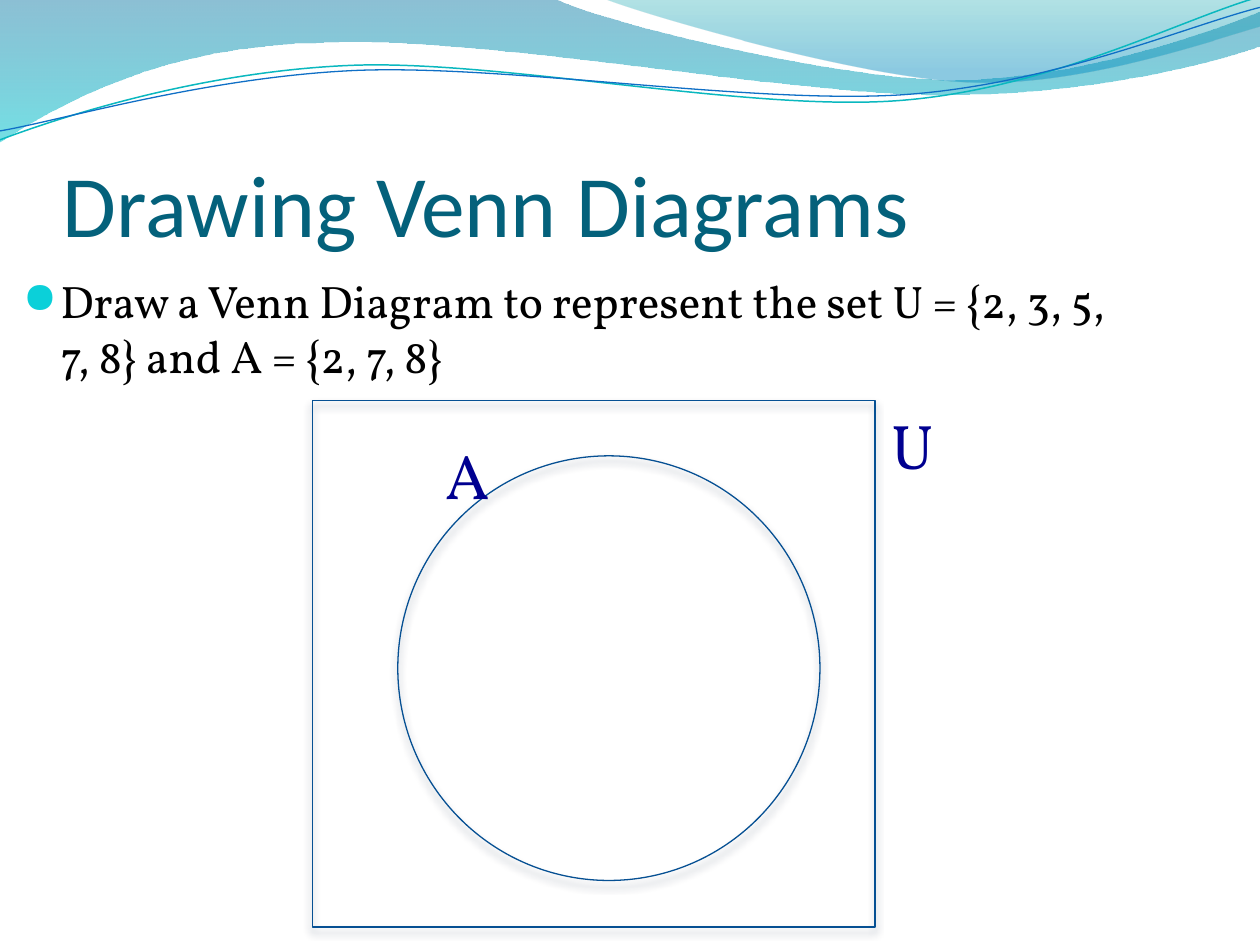
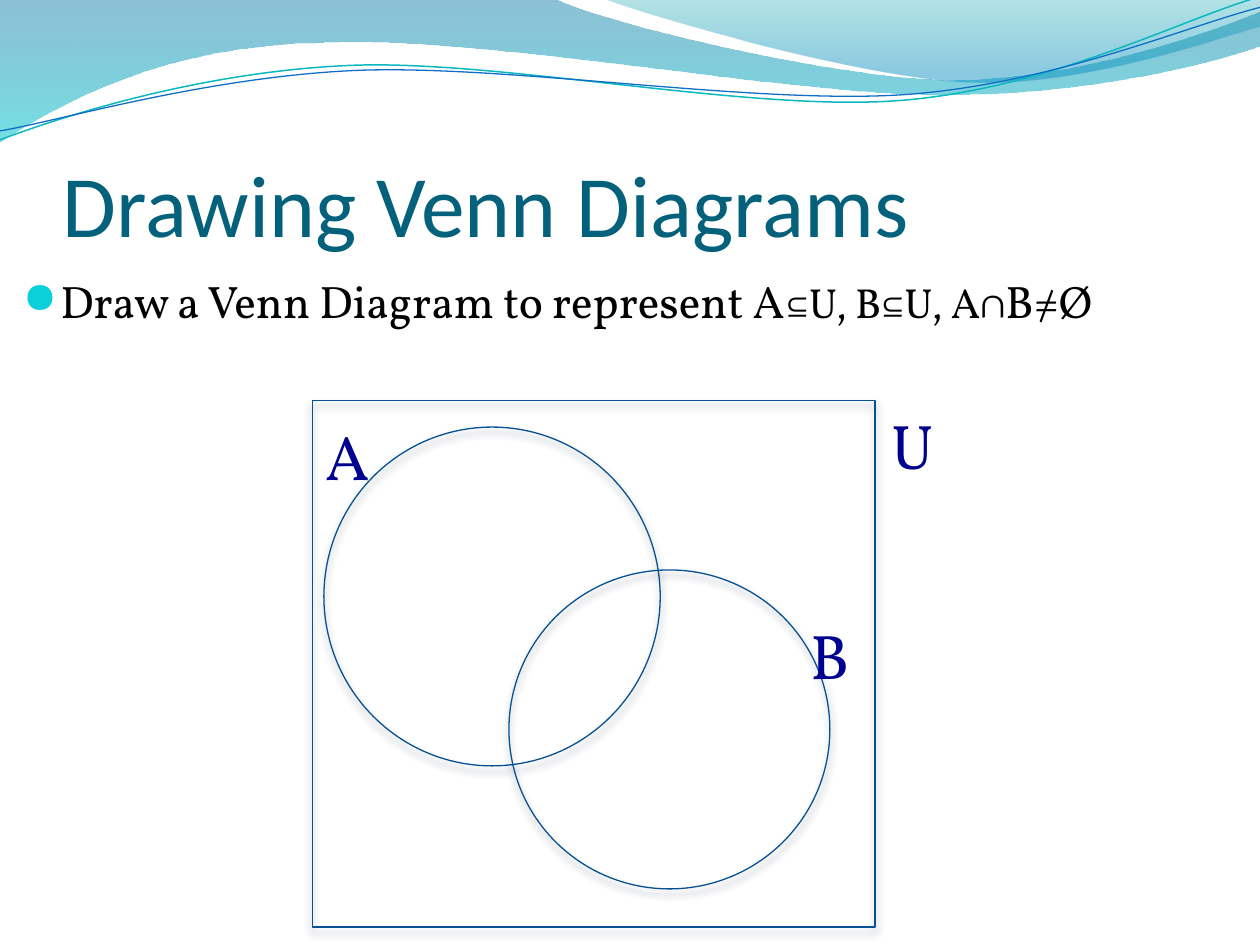
from lxml import etree
from pptx import Presentation
from pptx.dml.color import RGBColor
from pptx.enum import shapes, text
from pptx.oxml.ns import qn
from pptx.util import Cm, Pt

TEAL = RGBColor(0x04, 0x61, 0x7B)
BLACK = RGBColor(0, 0, 0)
NAVY = RGBColor(0, 0, 0x90)
OUTLINE = RGBColor(0x06, 0x50, 0x93)
SHADOW = RGBColor(0x00, 0x20, 0x41)
BULLET = RGBColor(0x0B, 0xD0, 0xD9)
WAVE_BLUE = RGBColor(0x00, 0x74, 0xA1)
WAVE_CYAN = RGBColor(0x00, 0xC6, 0xCF)
WAVE_GREEN = RGBColor(0x00, 0xA1, 0xA9)
WAVE_SKY = RGBColor(0x00, 0x8B, 0xBF)
CURVE_CYAN = RGBColor(0x0A, 0xB8, 0xBF)
CURVE_BLUE = RGBColor(0x0F, 0x6F, 0xC6)

TITLE = "Drawing Venn Diagrams"
TITLE_FONT = {"name": "Calibri", "size": Pt(50)}
BODY_FONT = {"name": "Vollkorn"}
LABEL_FONT = {"name": "Vollkorn", "size": Pt(36)}
TITLE_AREA = (1.27, 1.96, 22.86, 3.19)
UNIVERSE_AREA = (6.3, 8.08, 11.34, 10.61)
UNIVERSE_LABEL = ("U", 17.73, 8.08)
LABEL_SIZE = (2.41, 1.8)

SLIDES = [
    {
        "body_width": 22.86,
        "body": [("Draw a Venn Diagram to represent the set U = {2, 3, 5, 7, 8} and A = {2, 7, 8}", 26)],
        "sets": [((8.02, 9.19, 8.51, 8.56), ("A", 8.74, 8.67))],
    },
    {
        "body_width": 23.93,
        "body": [("Draw a Venn Diagram to represent A", 26), ("⊆U, B⊆U, A", 24), ("∩B≠Ø", 26)],
        "sets": [
            ((6.53, 8.61, 6.78, 6.83), ("A", 6.31, 8.29)),
            ((10.26, 11.49, 6.47, 6.43), ("B", 16.08, 12.31)),
        ],
    },
]

BANDS = [
    (
        [
            [(0, -0.03)],
            [(11.18, -0.03)],
            [(12.09, 0.43), (16.87, 1.6), (19.25, 1.6)],
            [(21.67, 1.6), (24.33, 0.66), (25.4, 0.23)],
            [(25.43, 0.91)],
            [(24.97, 1.12), (22.1, 1.93), (18.95, 1.91)],
            [(15.8, 1.91), (9.7, 0.71), (6.53, 0.86)],
            [(3.28, 0.89), (1.17, 2.11), (-0.03, 2.87)],
            [(0, -0.03)],
        ],
        [(0, WAVE_BLUE, 45), (1, WAVE_CYAN, 55)],
    ),
    (
        [
            [(12.17, -0.03)],
            [(12.93, 0.28), (17.32, 1.57), (19.53, 1.65)],
            [(21.74, 1.75), (24.41, 0.81), (25.4, 0.53)],
            [(25.4, 0)],
            [(12.17, -0.03)],
        ],
        [(0, WAVE_GREEN, 30), (0.8, WAVE_SKY, 45)],
    ),
]
CURVES = [
    (
        [
            [(0, 2.82)],
            [(1.22, 2.36), (4.01, 1.45), (7.04, 1.32)],
            [(10.03, 1.19), (15.06, 2.26), (18.11, 2.03)],
            [(21.16, 1.8), (23.83, 0.38), (25.35, -0.05)],
        ],
        CURVE_CYAN, 0.85,
    ),
    (
        [
            [(0, 2.64)],
            [(1.19, 2.44), (4.17, 1.55), (7.19, 1.42)],
            [(10.24, 1.3), (15.16, 2.11), (18.21, 1.91)],
            [(21.23, 1.7), (23.9, 0.53), (25.4, 0.15)],
        ],
        CURVE_BLUE, 0.75,
    ),
]


def add_element(parent, tag, **attributes):
    element = etree.SubElement(parent, qn(tag))
    for name, value in attributes.items():
        element.set(name, str(value))
    return element


def add_wave(page, steps, close):
    points = [(Cm(x), Cm(y)) for step in steps for x, y in step]
    builder = page.shapes.build_freeform(*points[0])
    builder.add_line_segments(points[1:], close=close)
    wave = builder.convert_to_shape()
    wave.shadow.inherit = False
    edges = iter(list(wave.element.spPr.iter(qn("a:lnTo"))))
    for step in steps[1:]:
        group = [next(edges) for _ in step]
        if len(group) == 3:
            bend = etree.Element(qn("a:cubicBezTo"))
            group[0].addprevious(bend)
            for edge in group:
                bend.append(edge[0])
                edge.getparent().remove(edge)
    return wave


def add_waves(page):
    for steps, stops in BANDS:
        band = add_wave(page, steps, True)
        band.line.fill.background()
        band.fill.gradient()
        band.fill.gradient_angle = 270
        for stop, (position, color, _) in zip(band.fill.gradient_stops, stops):
            stop.position = position
            stop.color.rgb = color
        colors = list(band.element.spPr.iter(qn("a:srgbClr")))
        for color, (_, _, opacity) in zip(colors, stops):
            add_element(color, "a:alpha", val=opacity * 1000)
    for steps, color, width in CURVES:
        curve = add_wave(page, steps, False)
        curve.fill.background()
        curve.line.color.rgb = color
        curve.line.width = Pt(width)


def add_text(page, area, spans, color):
    box = page.shapes.add_textbox(*map(Cm, area))
    box.text_frame.word_wrap = True
    para = box.text_frame.paragraphs[0]
    for words, font in spans:
        span = para.add_run()
        span.text = words
        for name, value in font.items():
            setattr(span.font, name, value)
        span.font.color.rgb = color
    return box


def add_title(page):
    frame = add_text(page, TITLE_AREA, [(TITLE, TITLE_FONT)], TEAL).text_frame
    layout = {"vertical_anchor": text.MSO_ANCHOR.BOTTOM, "margin_left": 0, "margin_right": 0, "margin_bottom": 0}
    for name, value in layout.items():
        setattr(frame, name, value)


def add_body(page, width, parts):
    spans = [(words, {**BODY_FONT, "size": Pt(size)}) for words, size in parts]
    box = add_text(page, (0.21, 5.38, width, 3.07), spans, BLACK)
    para = box.text_frame.paragraphs[0]
    para.space_before = Pt(5.2)
    properties = para._p.get_or_add_pPr()
    properties.set("marL", str(Cm(0.76)))
    properties.set("indent", str(Cm(-0.76)))
    add_element(add_element(properties, "a:buClr"), "a:srgbClr", val=BULLET)
    add_element(properties, "a:buSzPct", val=95000)
    add_element(properties, "a:buFont", typeface="OpenSymbol")
    add_element(properties, "a:buChar", char="●")


def add_outline(page, kind, area):
    outline = page.shapes.add_shape(kind, *map(Cm, area))
    outline.fill.background()
    outline.line.color.rgb = OUTLINE
    outline.line.width = Pt(0.75)
    outline.shadow.inherit = False
    effects = outline.element.spPr.find(qn("a:effectLst"))
    shadow = add_element(effects, "a:outerShdw", blurRad=Pt(4.5), dist=Pt(3), dir=90 * 60000, rotWithShape=0)
    add_element(add_element(shadow, "a:srgbClr", val=SHADOW), "a:alpha", val=48000)


def add_label(page, letter, left, top):
    add_text(page, (left, top, *LABEL_SIZE), [(letter, LABEL_FONT)], NAVY)


def add_venn(page, sets):
    for index, (circle, label) in enumerate(sets):
        add_outline(page, shapes.MSO_SHAPE.OVAL, circle)
        if index == 0:
            add_outline(page, shapes.MSO_SHAPE.RECTANGLE, UNIVERSE_AREA)
        add_label(page, *label)
        if index == 0:
            add_label(page, *UNIVERSE_LABEL)


def main():
    deck = Presentation()
    deck.slide_width, deck.slide_height = Cm(25.4), Cm(19.05)
    for content in SLIDES:
        page = deck.slides.add_slide(deck.slide_layouts[6])
        add_waves(page)
        add_title(page)
        add_body(page, content["body_width"], content["body"])
        add_venn(page, content["sets"])
    deck.save("out.pptx")


if __name__ == "__main__":
    main()
